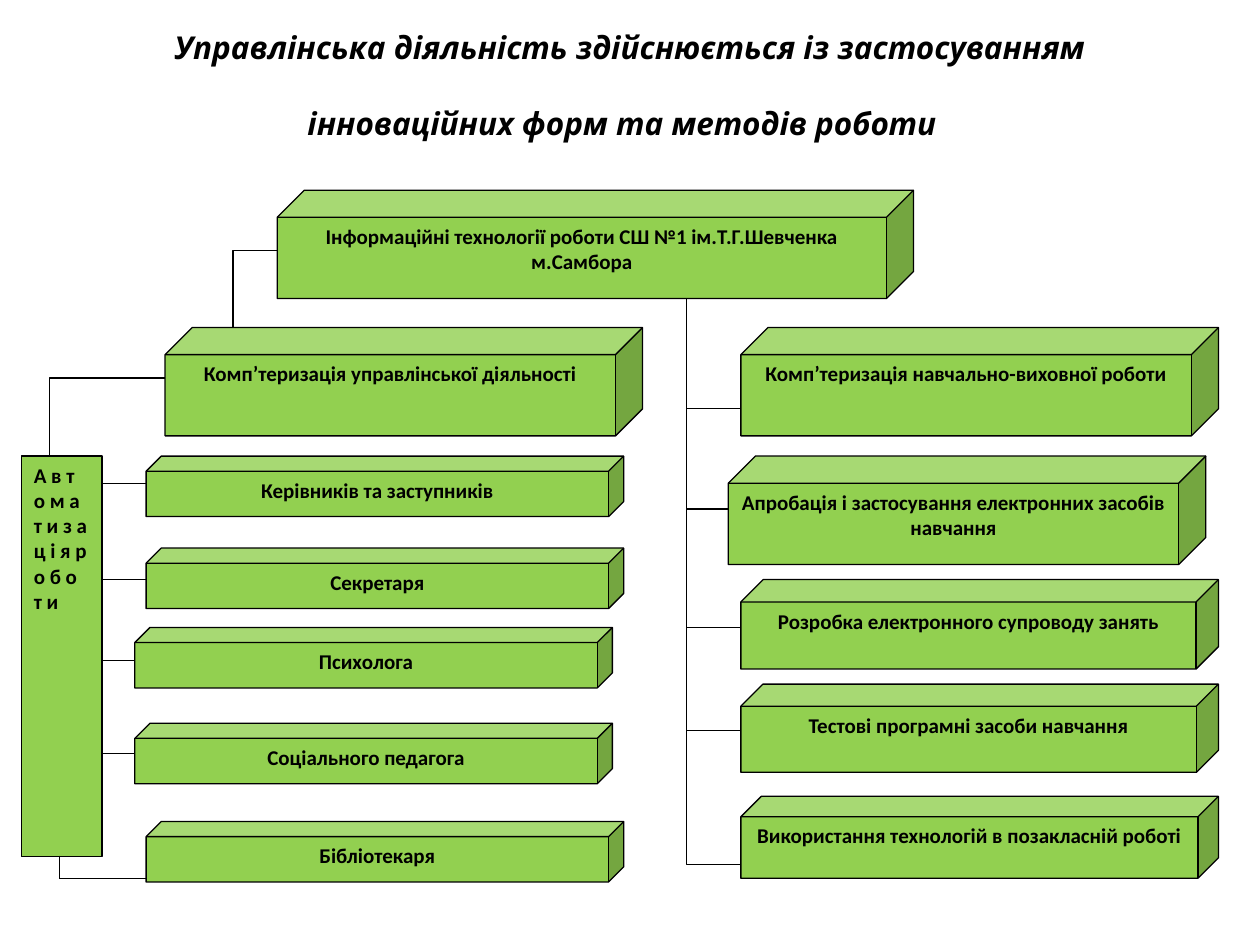
from dataclasses import dataclass

from lxml.etree import SubElement
from pptx import Presentation
from pptx.dml.color import RGBColor
from pptx.enum.shapes import MSO_CONNECTOR, MSO_SHAPE
from pptx.enum.text import MSO_ANCHOR, PP_ALIGN
from pptx.oxml.ns import qn
from pptx.slide import Slide
from pptx.util import Inches, Pt


@dataclass(frozen=True)
class Theme:
    ink: RGBColor = RGBColor(0x00, 0x00, 0x00)
    green: RGBColor = RGBColor(0x92, 0xD0, 0x50)
    title_font: str = "Open Sans"
    body_font: str = "Calibri"
    title_size: int = 18
    title_end_size: int = 40
    body_size: int = 12
    line_width: float = 0.75
    space_after: int = 10


@dataclass(frozen=True)
class Block:
    text: str
    left: float
    top: float
    width: float
    height: float
    shape: MSO_SHAPE = MSO_SHAPE.CUBE
    align: PP_ALIGN = PP_ALIGN.CENTER


@dataclass(frozen=True)
class Link:
    """A line; an elbow runs vertically first, then horizontally."""
    x1: float
    y1: float
    x2: float
    y2: float
    kind: MSO_CONNECTOR = MSO_CONNECTOR.STRAIGHT


THEME = Theme()
CUBE_WIDTH = 3.79
STAFF_HEIGHT = 0.48
BAR_RIGHT = 0.81
TRUNK_X = 5.45
FOOT_X, FOOT_Y = 0.47, 6.97

HEADS = [
    Block("Інформаційні технології роботи СШ №1 ім.Т.Г.Шевченка м.Самбора",
          2.2, 1.51, 5.05, 0.86),
    Block("Комп’теризація управлінської діяльності", 1.31, 2.6, CUBE_WIDTH, 0.86),
    Block("Комп’теризація навчально-виховної роботи", 5.88, 2.6, CUBE_WIDTH, 0.86),
    Block("А в т о м а т и з а ц і я р о б о т и", 0.17, 3.62, 0.64, 3.18,
          MSO_SHAPE.RECTANGLE, PP_ALIGN.LEFT),
]
STAFF = [
    Block(text, left, top, CUBE_WIDTH, STAFF_HEIGHT)
    for text, left, top in [
        ("Керівників та заступників", 1.16, 3.62),
        ("Секретаря", 1.16, 4.35),
        ("Психолога", 1.07, 4.98),
        ("Соціального педагога", 1.07, 5.74),
        ("Бібліотекаря", 1.16, 6.52),
    ]
]
TEACHING = [
    Block(text, left, top, CUBE_WIDTH, height)
    for text, left, top, height in [
        ("Апробація і застосування електронних засобів навчання", 5.78, 3.62, 0.86),
        ("Розробка електронного супроводу занять", 5.88, 4.6, 0.71),
        ("Тестові програмні засоби навчання", 5.88, 5.43, 0.7),
        ("Використання технологій в позакласній роботі", 5.88, 6.32, 0.65),
    ]
]

ELBOWS = [
    Link(*ends, MSO_CONNECTOR.ELBOW)
    for ends in [
        (TRUNK_X, 2.37, 5.88, 3.24),
        (TRUNK_X, 3.24, 5.88, 6.86),
        (1.85, 2.6, 2.2, 1.99),
        (0.39, 3.62, 1.31, 3.0),
    ]
]
TRUNK_BRANCHES = [
    Link(TRUNK_X, y, block.left, y) for block, y in zip(TEACHING, (4.04, 4.98, 5.8))
]
BAR_BRANCHES = [
    Link(BAR_RIGHT, y, block.left, y)
    for block, y in zip(STAFF, (3.84, 4.6, 5.24, 5.98))
]
FOOT = [
    Link(FOOT_X, 6.79, FOOT_X, FOOT_Y),
    Link(FOOT_X, FOOT_Y, STAFF[-1].left, FOOT_Y),
]


def add_span(para, text: str, font: str, size: float,
             bold: bool = True, italic: bool = False) -> None:
    span = para.add_run()
    span.text = text
    span.font.name = font
    span.font.size = Pt(size)
    span.font.bold = bold
    span.font.italic = italic
    span.font.color.rgb = THEME.ink


def add_title(page: Slide) -> None:
    box = page.shapes.add_textbox(Inches(0.5), Inches(0.58), Inches(9), Inches(0.25))
    frame = box.text_frame
    frame.word_wrap = True
    frame.vertical_anchor = MSO_ANCHOR.MIDDLE
    para = frame.paragraphs[0]
    para.alignment = PP_ALIGN.CENTER
    add_span(para, "Управлінська діяльність здійснюється із застосуванням "
                   "інноваційних форм та методів роботи",
             THEME.title_font, THEME.title_size, italic=True)
    # The large closing space sets the height of the second line
    add_span(para, " ", THEME.body_font, THEME.title_end_size, bold=False)


def add_block(page: Slide, block: Block) -> None:
    shape = page.shapes.add_shape(block.shape, Inches(block.left), Inches(block.top),
                                  Inches(block.width), Inches(block.height))
    shape.shadow.inherit = False
    shape.fill.solid()
    shape.fill.fore_color.rgb = THEME.green
    shape.line.color.rgb = THEME.ink
    shape.line.width = Pt(THEME.line_width)
    frame = shape.text_frame
    frame.word_wrap = True
    frame.vertical_anchor = MSO_ANCHOR.TOP
    para = frame.paragraphs[0]
    para.alignment = block.align
    para.space_after = Pt(THEME.space_after)
    add_span(para, block.text, THEME.body_font, THEME.body_size)


def add_link(page: Slide, link: Link) -> None:
    line = page.shapes.add_connector(link.kind, Inches(link.x1), Inches(link.y1),
                                     Inches(link.x2), Inches(link.y2))
    line.line.color.rgb = THEME.ink
    line.line.width = Pt(THEME.line_width)
    properties = line._element.spPr
    SubElement(properties, qn("a:effectLst"))
    if link.kind == MSO_CONNECTOR.ELBOW:
        # Bend at the very start of the connector
        guides = properties.find(qn("a:prstGeom")).find(qn("a:avLst"))
        SubElement(guides, qn("a:gd"), name="adj1", fmla="val 0")


def main() -> None:
    deck = Presentation()
    deck.slide_width, deck.slide_height = Inches(10), Inches(7.5)
    page = deck.slides.add_slide(deck.slide_layouts[6])
    add_title(page)
    for block in HEADS + STAFF + TEACHING:
        add_block(page, block)
    for link in ELBOWS + TRUNK_BRANCHES + BAR_BRANCHES + FOOT:
        add_link(page, link)
    deck.save("out.pptx")


if __name__ == "__main__":
    main()
